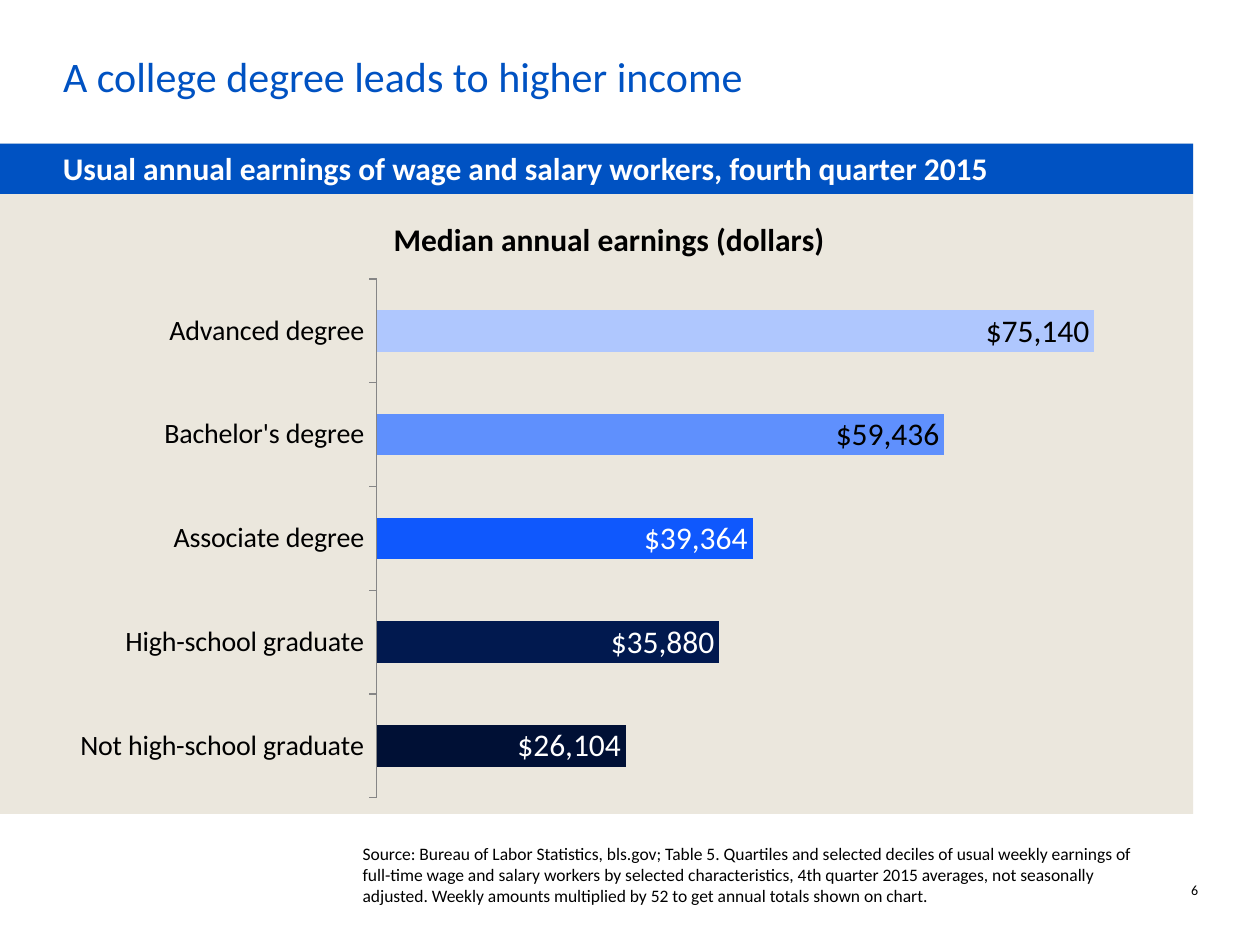
from dataclasses import dataclass

from lxml import etree
from pptx import Presentation
from pptx import util as u
from pptx.chart.data import CategoryChartData
from pptx.dml.color import RGBColor
from pptx.enum import chart as ch, shapes, text
from pptx.oxml import parse_xml
from pptx.oxml.ns import nsdecls

PX = 9144  # 100 px to the inch


@dataclass(frozen=True)
class Theme:
    face: str = "Calibri"
    ink: str = "000000"
    blue: str = "0052C2"
    sand: str = "EBE7DD"
    white: str = "FFFFFF"
    axis: str = "868686"
    head: int = 24
    sub: int = 18
    label: int = 16
    note: int = 10
    page: int = 8


THEME = Theme()
DOLLARS = '"$"#,##0'
# category, earnings, bar colour, label colour; from the bottom up
LEVELS = [
    ("Not high-school graduate", 26104, "001035", THEME.white),
    ("High-school graduate", 35880, "01194F", THEME.white),
    ("Associate degree", 39364, "0F58FD", THEME.white),
    ("Bachelor's degree", 59436, "5F90FD", THEME.ink),
    ("Advanced degree", 75140, "AFC7FE", THEME.ink),
]
SOURCE = (
    "Source: Bureau of Labor Statistics, bls.gov; Table 5. Quartiles and selected "
    "deciles of usual weekly earnings of \vfull-time wage and salary workers by "
    "selected characteristics, 4th quarter 2015 averages, not seasonally adjusted. "
    "Weekly amounts multiplied by 52 to get annual totals shown on chart."
)


def style(font, size, color=THEME.ink, bold=False):
    font.name = THEME.face
    font.size = u.Pt(size)
    font.bold = bold
    font.color.rgb = RGBColor.from_string(color)


def write(frame, words, size, color=THEME.ink, bold=False, align="LEFT", pad=(0, 5)):
    """Fill a text frame; pad is the inset across and down, in px."""
    frame.word_wrap = True
    frame.auto_size = text.MSO_AUTO_SIZE.NONE
    frame.vertical_anchor = text.MSO_ANCHOR.TOP
    frame.margin_left = frame.margin_right = pad[0] * PX
    frame.margin_top = frame.margin_bottom = pad[1] * PX
    para = frame.paragraphs[0]
    para.text = words
    para.alignment = text.PP_ALIGN[align]
    for run in para.runs:
        style(run.font, size, color, bold)


def place_plot(chart, x, y, w, h):
    """Fix the inner plot area, in shares of the chart."""
    area = chart._chartSpace.chart.plotArea
    for old in area.findall("{*}layout"):
        area.remove(old)
    layout = parse_xml(f"<c:layout {nsdecls('c')}><c:manualLayout/></c:layout>")
    parts = [("layoutTarget", "inner"), ("xMode", "edge"), ("yMode", "edge"),
             ("x", x), ("y", y), ("w", w), ("h", h)]
    space = etree.QName(layout).namespace
    for tag, val in parts:
        etree.SubElement(layout[0], f"{{{space}}}{tag}", val=str(val))
    area.insert(0, layout)


class Page:
    def __init__(self, deck, theme):
        self.theme = theme
        self.slide = deck.slides.add_slide(deck.slide_layouts[5])

    def title(self, words, *box):
        shape = self.slide.shapes.title
        shape.left, shape.top, shape.width, shape.height = (n * PX for n in box)
        write(shape.text_frame, words, self.theme.head, self.theme.blue)

    def band(self, color, *box):
        shape = self.slide.shapes.add_shape(
            shapes.MSO_SHAPE.RECTANGLE, *(n * PX for n in box))
        shape.shadow.inherit = False
        shape.fill.solid()
        shape.fill.fore_color.rgb = RGBColor.from_string(color)
        shape.line.fill.background()

    def text(self, words, *box, **form):
        shape = self.slide.shapes.add_textbox(*(n * PX for n in box))
        write(shape.text_frame, words, **form)

    def bars(self, name, levels, *box):
        look = self.theme
        data = CategoryChartData(number_format=DOLLARS)
        data.categories = [level[0] for level in levels]
        data.add_series("Series 1", [level[1] for level in levels])
        chart = self.slide.shapes.add_chart(
            ch.XL_CHART_TYPE.BAR_CLUSTERED, *(n * PX for n in box), data).chart
        style(chart.font, look.sub)
        chart.has_legend = False
        chart.has_title = True
        write(chart.chart_title.text_frame, name, look.sub, bold=True, align="CENTER")
        chart.chart_title.include_in_layout = False
        place_plot(chart, 0.29, 0.14, 0.69, 0.84)

        cats, vals = chart.category_axis, chart.value_axis
        style(cats.tick_labels.font, look.label)
        cats.major_tick_mark = ch.XL_TICK_MARK.OUTSIDE
        cats.format.line.color.rgb = RGBColor.from_string(look.axis)
        vals.minimum_scale, vals.maximum_scale = 0, 80000
        vals.has_major_gridlines = False
        vals.visible = False

        plot = chart.plots[0]
        plot.gap_width = 150
        plot.vary_by_categories = False
        plot.has_data_labels = True
        labels = plot.data_labels
        labels.show_value = True
        labels.number_format = DOLLARS
        labels.number_format_is_linked = False
        labels.position = ch.XL_LABEL_POSITION.INSIDE_END
        for i, (_, _, fill, ink) in enumerate(levels):
            point = plot.series[0].points[i]
            point.format.fill.solid()
            point.format.fill.fore_color.rgb = RGBColor.from_string(fill)
            style(point.data_label.font, look.sub, ink)
            point.data_label.position = ch.XL_LABEL_POSITION.INSIDE_END


def main():
    deck = Presentation()
    deck.slide_width, deck.slide_height = 1000 * PX, 750 * PX
    page = Page(deck, THEME)
    page.title("A college degree leads to higher income", 50, 35, 900, 89)
    page.band(THEME.sand, 0, 114, 947, 532)
    page.band(THEME.blue, 0, 114, 947, 40)
    page.text(SOURCE, 278, 664, 646, 61, size=THEME.note, pad=(10, 5))
    page.bars("Median annual earnings (dollars)", LEVELS, 44, 153, 879, 490)
    page.text("Usual annual earnings of wage and salary workers, fourth quarter 2015",
              50, 113, 900, 53, size=THEME.sub, color=THEME.white, bold=True)
    page.text("6", 907, 700, 44, 14, size=THEME.page, align="RIGHT", pad=(0, 0))
    deck.save("out.pptx")


if __name__ == "__main__":
    main()
